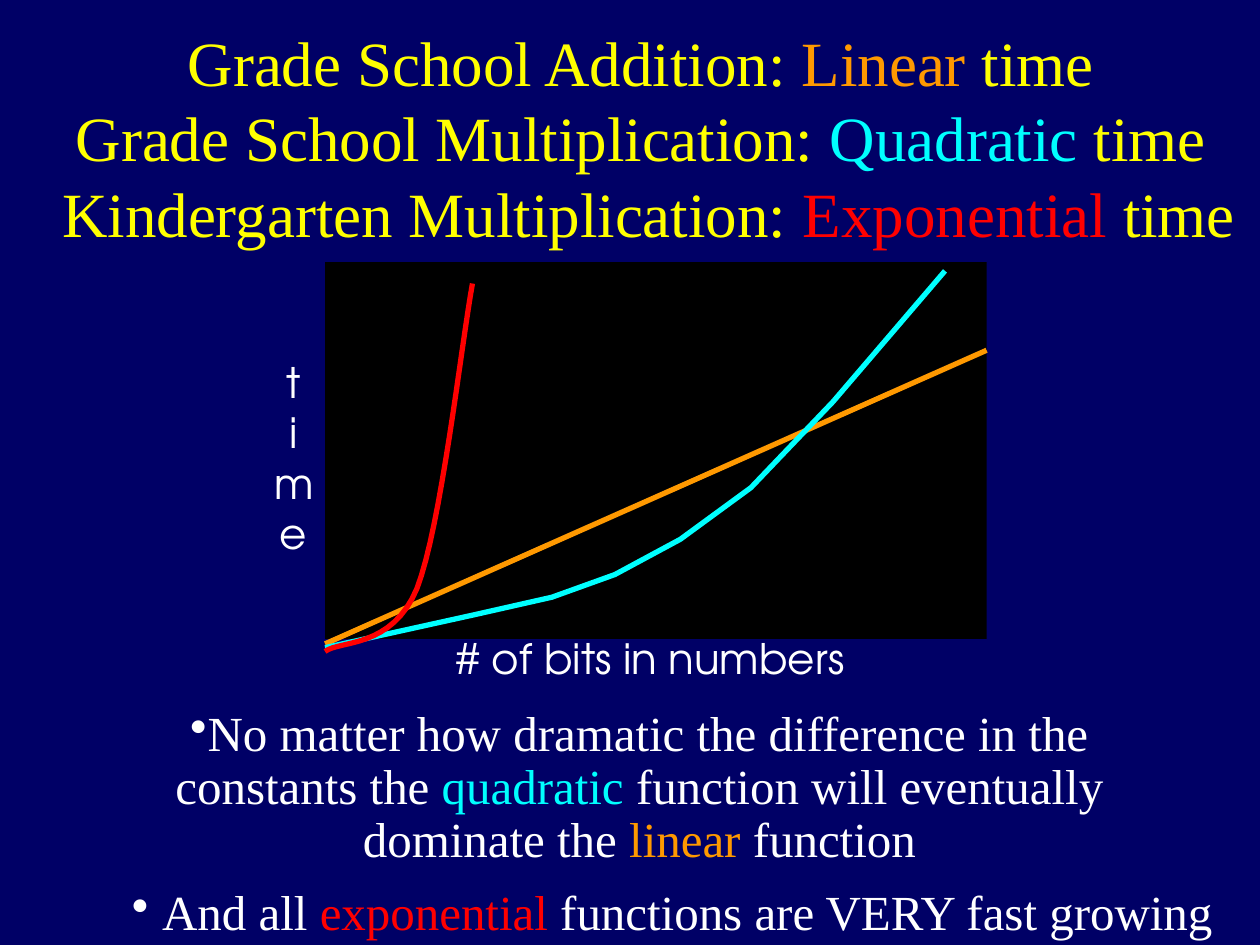
"""Build a slide that compares linear, quadratic and exponential growth."""
from lxml import etree
from pptx import Presentation
from pptx.dml.color import RGBColor
from pptx.enum.shapes import MSO_CONNECTOR, MSO_SHAPE
from pptx.enum.text import MSO_ANCHOR, MSO_AUTO_SIZE, PP_ALIGN
from pptx.oxml.ns import qn
from pptx.util import Inches, Pt

STRAIGHT = MSO_CONNECTOR.STRAIGHT
RECT = MSO_SHAPE.RECTANGLE
MIDDLE, TOP = MSO_ANCHOR.MIDDLE, MSO_ANCHOR.TOP
NO_FIT = MSO_AUTO_SIZE.NONE
CENTER = PP_ALIGN.CENTER
SERIF, SANS = "Times New Roman", "TeX Gyre Adventor"
COLORS = {
    "navy": "000066", "black": "000000", "white": "FFFFFF", "yellow": "FFFF00",
    "orange": "FF9900", "cyan": "00FFFF", "red": "FF0000",
}


def color(name):
    """Return the named colour."""
    return RGBColor.from_string(COLORS[name])


def bezier(start, *curves, steps=16):
    """Return points along a chain of cubic curves."""
    points = [start]
    for one, two, end in curves:
        first = points[-1]
        for step in range(1, steps + 1):
            t = step / steps
            u = 1 - t
            points.append(tuple(
                u**3 * a + 3 * u * u * t * b + 3 * u * t * t * c + t**3 * d
                for a, b, c, d in zip(first, one, two, end)))
    return points


class Deck:
    """Hold the style and the current slide."""

    def __init__(self, width, height, back):
        """Start a deck with one title-only slide."""
        self.show = Presentation()
        self.show.slide_width, self.show.slide_height = Inches(width), Inches(height)
        self.slide = self.show.slides.add_slide(self.show.slide_layouts[5])
        self.slide.background.fill.solid()
        self.slide.background.fill.fore_color.rgb = color(back)
        self.group = None

    def fill_text(self, frame, runs, size, font):
        """Write coloured runs into a centred paragraph."""
        para = frame.paragraphs[0]
        para.alignment = CENTER
        for text, tint in runs:
            for index, part in enumerate(text.split("\n")):
                if index:
                    para.add_line_break()
                run = para.add_run()
                run.text = part
                run.font.size, run.font.name = Pt(size), font
                run.font.color.rgb = color(tint)
        for brk in para._p.findall(qn("a:br")):
            etree.SubElement(brk, qn("a:rPr"), sz=str(size * 100))
        return para

    def title(self, box, runs, size):
        """Place and fill the title."""
        shape = self.slide.shapes.title
        shape.left, shape.top, shape.width, shape.height = map(Inches, box)
        frame = shape.text_frame
        frame.word_wrap, frame.auto_size = True, NO_FIT
        frame.vertical_anchor = MIDDLE
        self.fill_text(frame, runs, size, SERIF)

    def text(self, home, box, runs, size, font, wrap=True):
        """Add a text box to a slide or group."""
        frame = home.shapes.add_textbox(*map(Inches, box)).text_frame
        frame.word_wrap, frame.vertical_anchor = wrap, TOP
        return self.fill_text(frame, runs, size, font)

    def bullet(self, box, runs, size, indent=0):
        """Add a bulleted statement."""
        para = self.text(self.slide, box, runs, size, SERIF)
        para.line_spacing = 0.9
        props = para._p.get_or_add_pPr()
        props.set("marL", str(Inches(indent)))
        props.set("indent", str(-Inches(indent)))
        etree.SubElement(props, qn("a:buChar"), char="•")

    def plot(self, box, fill):
        """Start the chart group with its background."""
        self.group = self.slide.shapes.add_group_shape()
        shape = self.group.shapes.add_shape(RECT, *map(Inches, box))
        shape.shadow.inherit = False
        shape.fill.solid()
        shape.fill.fore_color.rgb = color(fill)
        shape.line.fill.background()

    def label(self, box, text, wrap):
        """Add an axis label to the chart group."""
        self.text(self.group, box, [(text, "white")], 24, SANS, wrap)

    def stroke(self, shape, tint):
        """Style a plotted line."""
        shape.line.color.rgb = color(tint)
        shape.line.width = Pt(3)

    def line(self, start, end, tint):
        """Plot a straight line."""
        shape = self.group.shapes.add_connector(
            STRAIGHT, *map(Inches, (*start, *end)))
        etree.SubElement(shape._element.spPr, qn("a:effectLst"))
        self.stroke(shape, tint)

    def curve(self, points, tint):
        """Plot an open curve through points."""
        spots = [(Inches(x), Inches(y)) for x, y in points]
        build = self.group.shapes.build_freeform(*spots[0])
        build.add_line_segments(spots[1:], close=False)
        shape = build.convert_to_shape()
        shape.shadow.inherit = False
        shape.fill.background()
        self.stroke(shape, tint)


def main():
    """Build and save the slide."""
    deck = Deck(10, 7.5, "navy")
    deck.title((0.17, 0.25, 9.83, 1.67), [
        ("Grade School Addition: ", "yellow"), ("Linear", "orange"),
        (" time\nGrade School Multiplication: ", "yellow"), ("Quadratic", "cyan"),
        (" time\n Kindergarten Multiplication: ", "yellow"), ("Exponential", "red"),
        (" time", "yellow")], 36)
    deck.bullet((1.06, 5.58, 8.03, 0.98), [
        ("No matter how dramatic the difference in the constants the ", "white"),
        ("quadratic ", "cyan"), ("function will eventually dominate the ", "white"),
        ("linear ", "orange"), ("function", "white")], 28)

    deck.plot((2.58, 2.08, 5.25, 2.99), "black")
    deck.label((3.49, 4.97, 3.35, 0.5), "# of bits in numbers", False)
    deck.label((2.08, 2.78, 0.5, 1.7), "t\nime", True)
    deck.line((7.83, 2.78), (2.58, 5.11), "orange")
    deck.curve([(2.58, 5.14), (3.76, 4.88), (4.38, 4.74), (4.88, 4.56),
                (5.4, 4.28), (5.96, 3.87), (6.61, 3.19), (7.5, 2.15)], "cyan")
    deck.curve(bezier((2.58, 5.17),
                      ((2.7, 5.08), (3.11, 5.15), (3.31, 4.67)),
                      ((3.5, 4.18), (3.66, 2.75), (3.75, 2.25))), "red")

    deck.bullet((0.75, 7, 9.17, 0.58), [
        ("And all ", "white"), ("exponential", "red"),
        (" functions are VERY fast growing", "white")], 28, 0.24)
    deck.show.save("out.pptx")


if __name__ == "__main__":
    main()
